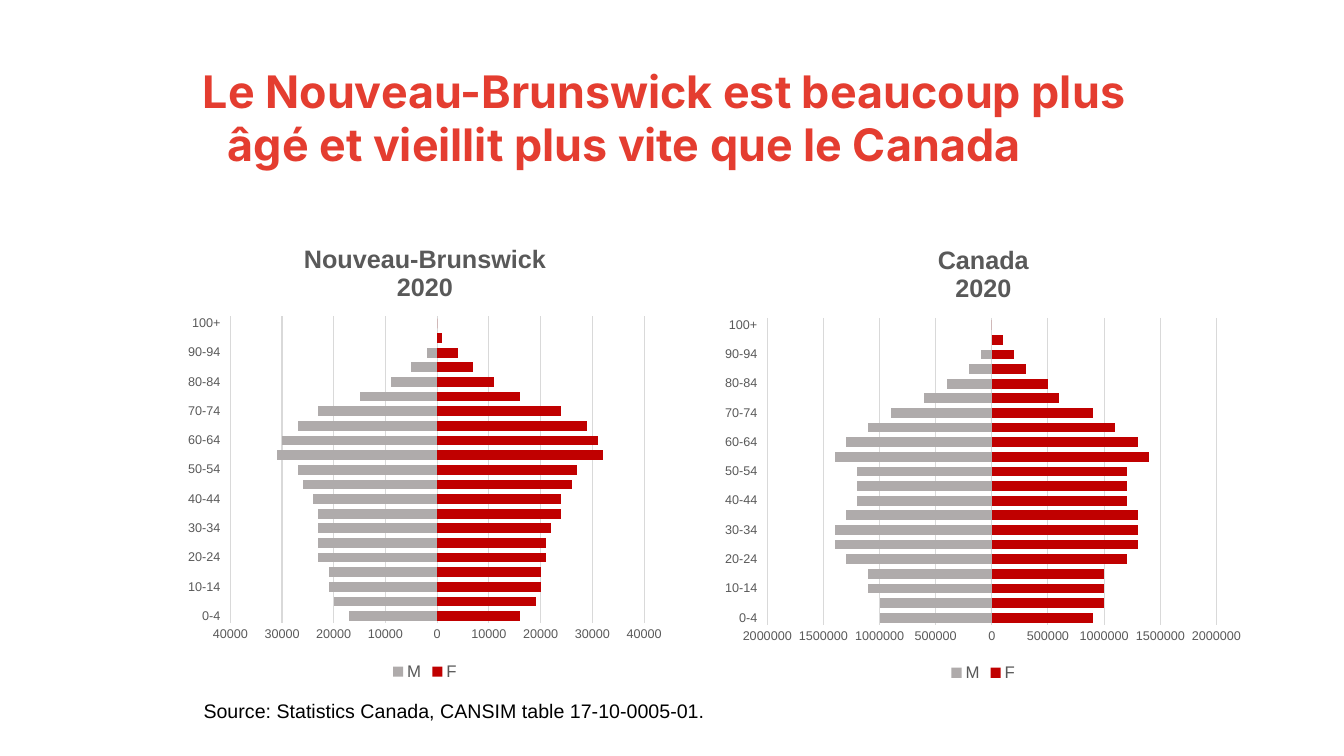
from lxml.etree import SubElement
from pptx import Presentation
from pptx.chart.data import CategoryChartData
from pptx.dml.color import RGBColor
from pptx.enum.chart import XL_CHART_TYPE, XL_LEGEND_POSITION, XL_TICK_LABEL_POSITION, XL_TICK_MARK
from pptx.enum.text import MSO_ANCHOR, MSO_AUTO_SIZE, PP_ALIGN
from pptx.oxml import parse_xml
from pptx.oxml.ns import nsdecls, qn
from pptx.util import Cm, Pt

HEADLINE = "Le Nouveau-Brunswick est beaucoup plus âgé et vieillit plus vite que le Canada"
SOURCE = "Source: Statistics Canada, CANSIM table 17-10-0005-01."
AGES = [f"{age}-{age + 4}" for age in range(0, 100, 5)] + ["100+"]

PYRAMIDS = [
    {
        "heading": "Nouveau-Brunswick\n2020",
        "box": (4.5, 5.69, 12.42, 11.56),
        "plot": {"x": 0.105, "y": 0.197, "w": 0.84, "h": 0.67},
        "unit": 1000, "limit": 40000, "step": 10000,
        "M": [17, 20, 21, 21, 23, 23, 23, 23, 24, 26, 27, 31, 30, 27, 23, 15, 9, 5, 2, 0, 0],
        "F": [16, 19, 20, 20, 21, 21, 22, 24, 24, 26, 27, 32, 31, 29, 24, 16, 11, 7, 4, 1, 0],
    },
    {
        "heading": "Canada\n2020",
        "box": (18.01, 5.72, 13.54, 11.56),
        "plot": {"x": 0.098, "y": 0.198, "w": 0.836, "h": 0.67},
        "unit": 100000, "limit": 2000000, "step": 500000,
        "M": [10, 10, 11, 11, 13, 14, 14, 13, 12, 12, 12, 14, 13, 11, 9, 6, 4, 2, 1, 0, 0],
        "F": [9, 10, 10, 10, 12, 13, 13, 13, 12, 12, 12, 14, 13, 11, 9, 6, 5, 3, 2, 1, 0],
    },
]
SIDES = {"M": -1, "F": 1}

THEME = {
    "headline": {"name": "Inter", "size": Pt(32), "bold": True, "color": "E43D30"},
    "heading": {"name": "Arial", "size": Pt(18), "bold": True, "color": "595959"},
    "axis": {"name": "Arial", "size": Pt(9), "bold": False, "color": "595959"},
    "legend": {"name": "Arial", "size": Pt(12), "bold": False, "color": "595959"},
    "source": {"name": "Arial", "size": Pt(14), "bold": False, "color": "000000"},
    "grid": "D9D9D9",
    "M": "AFABAB",
    "F": "C00000",
}


def assign(target, values):
    for key, value in values.items():
        setattr(target, key, value)


def style(font, role):
    values = dict(THEME[role])
    font.color.rgb = RGBColor.from_string(values.pop("color"))
    assign(font, values)


def draw_line(line, color):
    line.color.rgb = RGBColor.from_string(color)
    line.width = Pt(0.75)


def place(box):
    return [Cm(length) for length in box]


def fix_plot(chart, plot):
    area = chart._chartSpace.chart.plotArea
    for old in area.findall(qn("c:layout")):
        area.remove(old)
    layout = parse_xml(f"<c:layout {nsdecls('c')}/>")
    manual = SubElement(layout, qn("c:manualLayout"))
    settings = {"layoutTarget": "inner", "xMode": "edge", "yMode": "edge", **plot}
    for tag, value in settings.items():
        SubElement(manual, qn(f"c:{tag}")).set("val", str(value))
    area.insert(0, layout)


def add_pyramid(slide, pyramid):
    population = CategoryChartData()
    population.categories = AGES
    for side, sign in SIDES.items():
        population.add_series(side, [sign * count * pyramid["unit"] for count in pyramid[side]])
    chart = slide.shapes.add_chart(
        XL_CHART_TYPE.BAR_STACKED, *place(pyramid["box"]), population
    ).chart
    assign(chart, {"has_title": True, "has_legend": True})

    heading = chart.chart_title
    heading.include_in_layout = False
    heading.text_frame.text = pyramid["heading"]
    for paragraph in heading.text_frame.paragraphs:
        style(paragraph.runs[0].font, "heading")

    assign(chart.legend, {"position": XL_LEGEND_POSITION.BOTTOM, "include_in_layout": False})
    style(chart.legend.font, "legend")

    bars = chart.plots[0]
    assign(bars, {"gap_width": 50, "overlap": 100, "vary_by_categories": False})
    for side in bars.series:
        side.invert_if_negative = False
        side.format.fill.solid()
        side.format.fill.fore_color.rgb = RGBColor.from_string(THEME[side.name])

    ages, counts = chart.category_axis, chart.value_axis
    for axis in (ages, counts):
        assign(axis, {"major_tick_mark": XL_TICK_MARK.NONE, "minor_tick_mark": XL_TICK_MARK.NONE})
        style(axis.tick_labels.font, "axis")
    ages.tick_label_position = XL_TICK_LABEL_POSITION.LOW
    draw_line(ages.format.line, THEME["grid"])
    skip = parse_xml(f'<c:tickLblSkip {nsdecls("c")} val="2"/>')
    ages._element.find(qn("c:noMultiLvlLbl")).addprevious(skip)

    assign(counts, {
        "minimum_scale": -pyramid["limit"], "maximum_scale": pyramid["limit"],
        "major_unit": pyramid["step"], "has_major_gridlines": True,
    })
    assign(counts.tick_labels, {"number_format": "0;0", "number_format_is_linked": False})
    counts.format.line.fill.background()
    draw_line(counts.major_gridlines.format.line, THEME["grid"])
    fix_plot(chart, pyramid["plot"])


def write(shape, text, role, frame_values):
    assign(shape.text_frame, {"word_wrap": True, "text": text, **frame_values})
    paragraph = shape.text_frame.paragraphs[0]
    assign(paragraph, {"alignment": PP_ALIGN.LEFT, "line_spacing": 1.0})
    style(paragraph.runs[0].font, role)
    return paragraph


def main():
    deck = Presentation()
    assign(deck, {"slide_width": Cm(33.87), "slide_height": Cm(19.05)})
    slide = deck.slides.add_slide(deck.slide_layouts[5])

    headline = slide.shapes.title
    assign(headline, dict(zip(("left", "top", "width", "height"), place((4.22, 1.47, 24.66, 3.3)))))
    paragraph = write(headline, HEADLINE, "headline", {
        "vertical_anchor": MSO_ANCHOR.TOP, "auto_size": MSO_AUTO_SIZE.NONE,
    })
    hanging = paragraph._p.get_or_add_pPr()
    for key, length in {"marL": Cm(1.27), "indent": Cm(-0.63)}.items():
        hanging.set(key, str(int(length)))

    for pyramid in PYRAMIDS:
        add_pyramid(slide, pyramid)

    source = slide.shapes.add_textbox(*place((4.88, 17.48, 23.77, 0.86)))
    write(source, SOURCE, "source", {"auto_size": MSO_AUTO_SIZE.SHAPE_TO_FIT_TEXT})
    deck.save("out.pptx")


if __name__ == "__main__":
    main()
